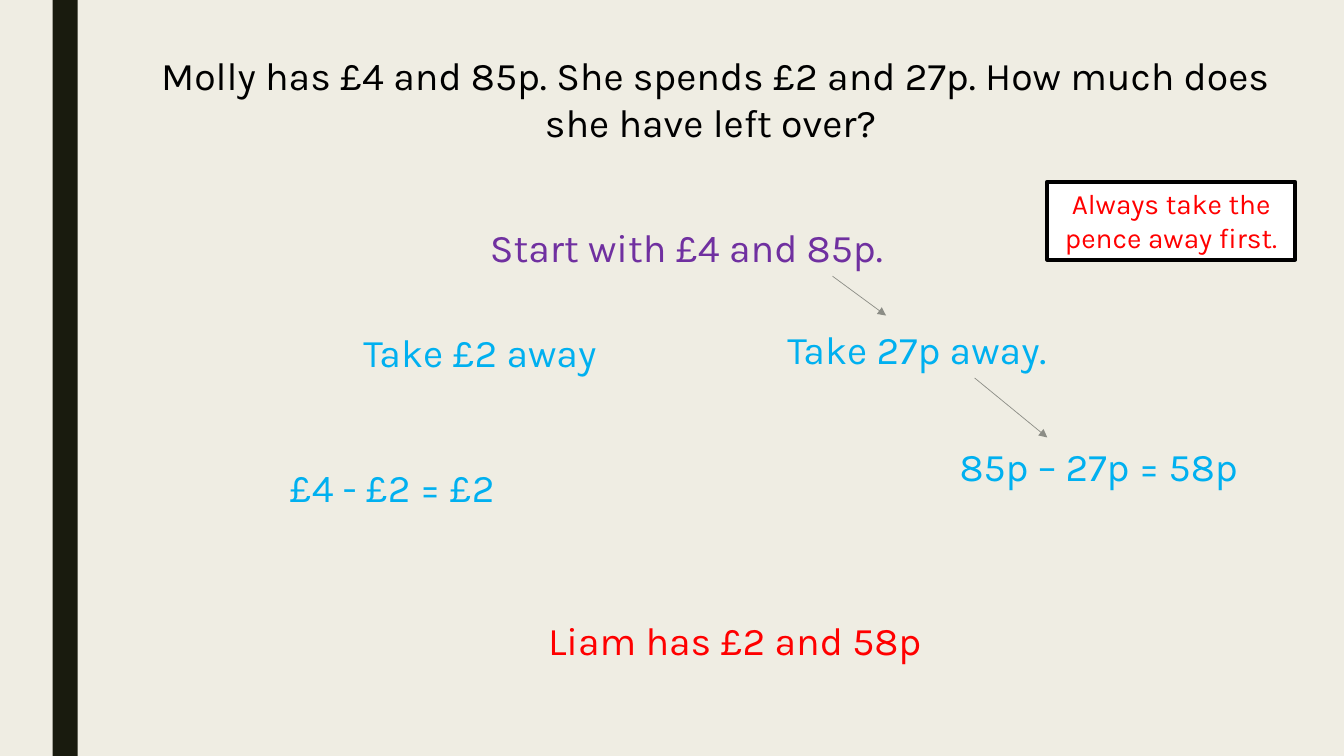
from lxml import etree
from pptx import Presentation
from pptx import util as u
from pptx.dml.color import RGBColor
from pptx.enum import shapes, text
from pptx.oxml import ns

COLORS = {
    "background": "EFEDE3",
    "bar": "191B0E",
    "question": "000000",
    "start": "7030A0",
    "step": "00B0F0",
    "answer": "FF0000",
    "arrow": "8C8D86",
    "tip_fill": "FFFFFF",
    "tip_line": "000000",
}


def color(name):
    return RGBColor.from_string(COLORS[name])


def write(sp, words, size, name):
    tf = sp.text_frame
    tf.word_wrap = True
    tf.auto_size = text.MSO_AUTO_SIZE.SHAPE_TO_FIT_TEXT
    tf.text = words
    p = tf.paragraphs[0]
    p.alignment = text.PP_ALIGN.CENTER
    r = p.runs[0]
    r.font.name = "Karla"
    r.font.size = u.Pt(size)
    r.font.color.rgb = color(name)


prs = Presentation()
prs.slide_width, prs.slide_height = u.Pt(960), u.Pt(540)
s = prs.slides.add_slide(prs.slide_layouts[6])
s.background.fill.solid()
s.background.fill.fore_color.rgb = color("background")

bar = s.shapes.add_shape(
    shapes.MSO_SHAPE.RECTANGLE, u.Pt(37.5), u.Pt(0), u.Pt(18), u.Pt(540))
bar.shadow.inherit = False
bar.fill.solid()
bar.fill.fore_color.rgb = color("bar")
bar.line.fill.background()

lines = [
    ("Molly has £4 and 85p. She spends £2 and 27p. How much does she have left over? ",
     97.2, 33.1, 827.3, 74.9, "question"),
    ("Start with £4 and 85p. ", 79.9, 156.2, 827.3, 41, "start"),
    ("Take 27p away.", 542.2, 229, 225.4, 41, "step"),
    ("85p – 27p = 58p", 654.5, 312.5, 260.6, 41, "step"),
    ("Take £2 away", 212.4, 231.1, 260.6, 41, "step"),
    ("£4 - £2 = £2", 149.8, 327.6, 260.6, 41, "step"),
    ("Liam has £2 and 58p ", 114.5, 437, 827.3, 41, "answer"),
]
for words, left, top, width, height, name in lines:
    sp = s.shapes.add_textbox(u.Pt(left), u.Pt(top), u.Pt(width), u.Pt(height))
    write(sp, words, 28, name)

arrows = [(594.7, 197.3, 632.9, 225.4), (696.2, 270, 748.1, 312.5)]
for ends in arrows:
    arrow = s.shapes.add_connector(
        shapes.MSO_CONNECTOR.STRAIGHT, *[u.Pt(v) for v in ends])
    arrow.line.color.rgb = color("arrow")
    arrow.line.width = u.Pt(0.5)
    ln = arrow.line._get_or_add_ln()
    etree.SubElement(ln, ns.qn("a:tailEnd"), type="triangle")
    etree.SubElement(arrow._element.spPr, ns.qn("a:effectLst"))

tip = s.shapes.add_shape(
    shapes.MSO_SHAPE.RECTANGLE, u.Pt(748.1), u.Pt(129.8), u.Pt(177.1), u.Pt(55.7))
tip.shadow.inherit = False
tip.fill.solid()
tip.fill.fore_color.rgb = color("tip_fill")
tip.line.color.rgb = color("tip_line")
tip.line.width = u.Pt(2.75)
write(tip, "Always take the pence away first.", 20, "answer")
tip.text_frame.vertical_anchor = text.MSO_ANCHOR.TOP

prs.save("out.pptx")
